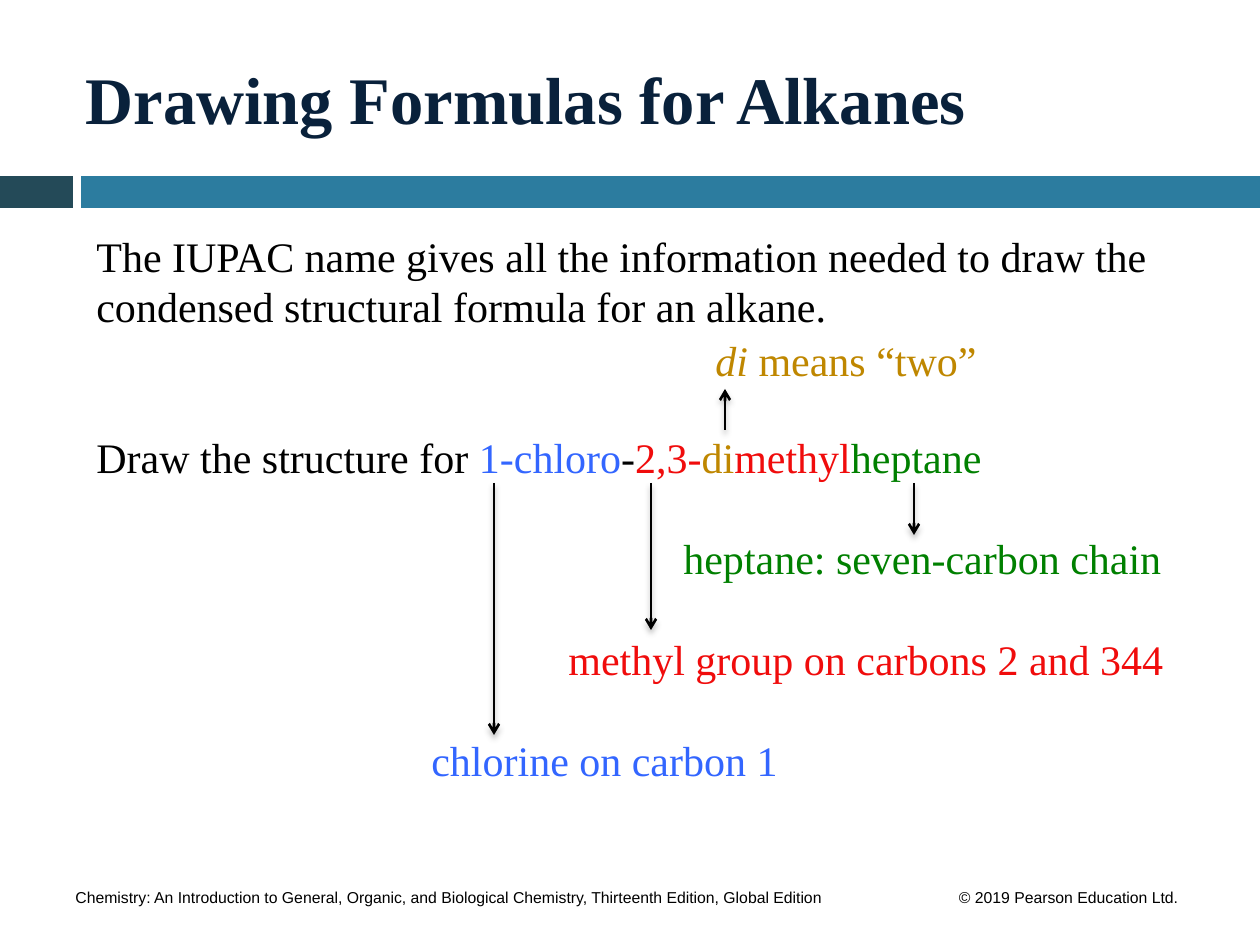
import pptx
import pptx.dml.color
import pptx.enum.shapes
import pptx.enum.text
import pptx.oxml
import pptx.oxml.ns
import pptx.util

COLORS = {
    "black": "000000",
    "navy": "09213B",
    "slate": "244A58",
    "teal": "2C7C9F",
    "blue": "3366FF",
    "red": "F00C0C",
    "gold": "BF8700",
    "green": "008000",
    "shadow": "808080",
}
SERIF = "Times New Roman"
SANS = "Arial"
LINE_HEIGHT = 28.8
ALIGN = pptx.enum.text.PP_ALIGN


def px(length):
    return pptx.util.Emu(round(length * 914400 / 126))


def rgb(name):
    return pptx.dml.color.RGBColor.from_string(COLORS[name])


class SlideBuilder:
    def __init__(self, presentation):
        self.slide = presentation.slides.add_slide(presentation.slide_layouts[5])

    def style(self, paragraph, size, font, color=None, bold=None):
        paragraph.font.size = pptx.util.Pt(size)
        paragraph.font.name = font
        paragraph.font.bold = bold
        if color:
            paragraph.font.color.rgb = rgb(color)

    def title(self, text, left, top, width, height):
        shape = self.slide.shapes.title
        shape.left, shape.top, shape.width, shape.height = map(px, (left, top, width, height))
        frame = shape.text_frame
        frame.text = text
        frame.vertical_anchor = pptx.enum.text.MSO_ANCHOR.MIDDLE
        paragraph = frame.paragraphs[0]
        paragraph.alignment = ALIGN.LEFT
        self.style(paragraph, 38, SERIF, "navy", True)

    def band(self, left, top, width, height, color):
        shape = self.slide.shapes.add_shape(
            pptx.enum.shapes.MSO_SHAPE.RECTANGLE, *map(px, (left, top, width, height)))
        shape.shadow.inherit = False
        shape.fill.solid()
        shape.fill.fore_color.rgb = rgb(color)
        shape.line.fill.background()

    def text_box(self, left, top, width, height, wrap=True):
        shape = self.slide.shapes.add_textbox(*map(px, (left, top, width, height)))
        shape.text_frame.word_wrap = wrap
        return shape.text_frame

    def footer(self, text, left, width, alignment):
        paragraph = self.text_box(left, 882, width, 32).paragraphs[0]
        paragraph.text = text
        paragraph.alignment = alignment
        self.style(paragraph, 9, SANS, "black")

    def runs(self, paragraph, pieces):
        self.style(paragraph, 24, SERIF)
        for text, color in pieces:
            run = paragraph.add_run()
            run.text = text
            run.font.color.rgb = rgb(color)

    def body(self, lines, left, top, width, height):
        frame = self.text_box(left, top, width, height)
        for index, (blank_lines, indent, pieces) in enumerate(lines):
            paragraph = frame.paragraphs[0] if index == 0 else frame.add_paragraph()
            properties = paragraph._p.get_or_add_pPr()
            properties.set("marL", str(px(indent)))
            properties.set("indent", "0")
            paragraph.line_spacing = pptx.util.Pt(LINE_HEIGHT)
            paragraph.space_before = pptx.util.Pt(LINE_HEIGHT * blank_lines)
            self.runs(paragraph, pieces)

    def arrow(self, x, start, end):
        connector = self.slide.shapes.add_connector(
            pptx.enum.shapes.MSO_CONNECTOR.STRAIGHT, px(x), px(start), px(x), px(end))
        connector.line.color.rgb = rgb("black")
        connector.line.width = pptx.util.Pt(1.5)
        namespace = pptx.oxml.ns.nsdecls("a")
        connector.line._get_or_add_ln().append(
            pptx.oxml.parse_xml(f'<a:tailEnd {namespace} type="arrow"/>'))
        connector._element.spPr.append(pptx.oxml.parse_xml(
            f'<a:effectLst {namespace}><a:outerShdw blurRad="38100" dist="30000" '
            f'dir="5400000" rotWithShape="0"><a:srgbClr val="{COLORS["shadow"]}">'
            '<a:alpha val="45000"/></a:srgbClr></a:outerShdw></a:effectLst>'))


def main():
    presentation = pptx.Presentation()
    presentation.slide_width = px(1260)
    presentation.slide_height = px(945)
    builder = SlideBuilder(presentation)

    builder.band(0, 176, 73, 32, "slate")
    builder.band(81, 176, 1179, 32, "teal")
    builder.footer("Chemistry: An Introduction to General, Organic, and Biological Chemistry, "
                   "Thirteenth Edition, Global Edition", 63, 788, ALIGN.LEFT)
    builder.footer("© 2019 Pearson Education Ltd.", 911, 315, ALIGN.CENTER)
    builder.title("Drawing Formulas for Alkanes", 73, 30, 1124, 136)

    builder.body([
        (0, 0, [("The IUPAC name gives all the information needed to draw the "
                 "condensed structural formula for an alkane.", "black")]),
        (2, 0, [("Draw the structure for ", "black"), ("1-chloro", "blue"), ("-", "black"),
                ("2,3-", "red"), ("di", "gold"), ("methyl", "red"), ("heptane", "green")]),
        (1, 587, [("heptane: seven-carbon chain", "green")]),
        (1, 472, [("methyl group on carbons 2 and 344", "red")]),
        (1, 335, [("chlorine on carbon 1", "blue")]),
    ], 84, 224, 1113, 572)

    for x, start, end in [(914, 483, 535), (651, 483, 630), (494, 483, 735), (725, 430, 389)]:
        builder.arrow(x, start, end)

    prefix = builder.text_box(703, 328, 287, 64, wrap=False).paragraphs[0]
    builder.runs(prefix, [("di", "gold"), (" means “two”", "gold")])
    prefix.runs[0].font.italic = True

    presentation.save("out.pptx")


if __name__ == "__main__":
    main()
